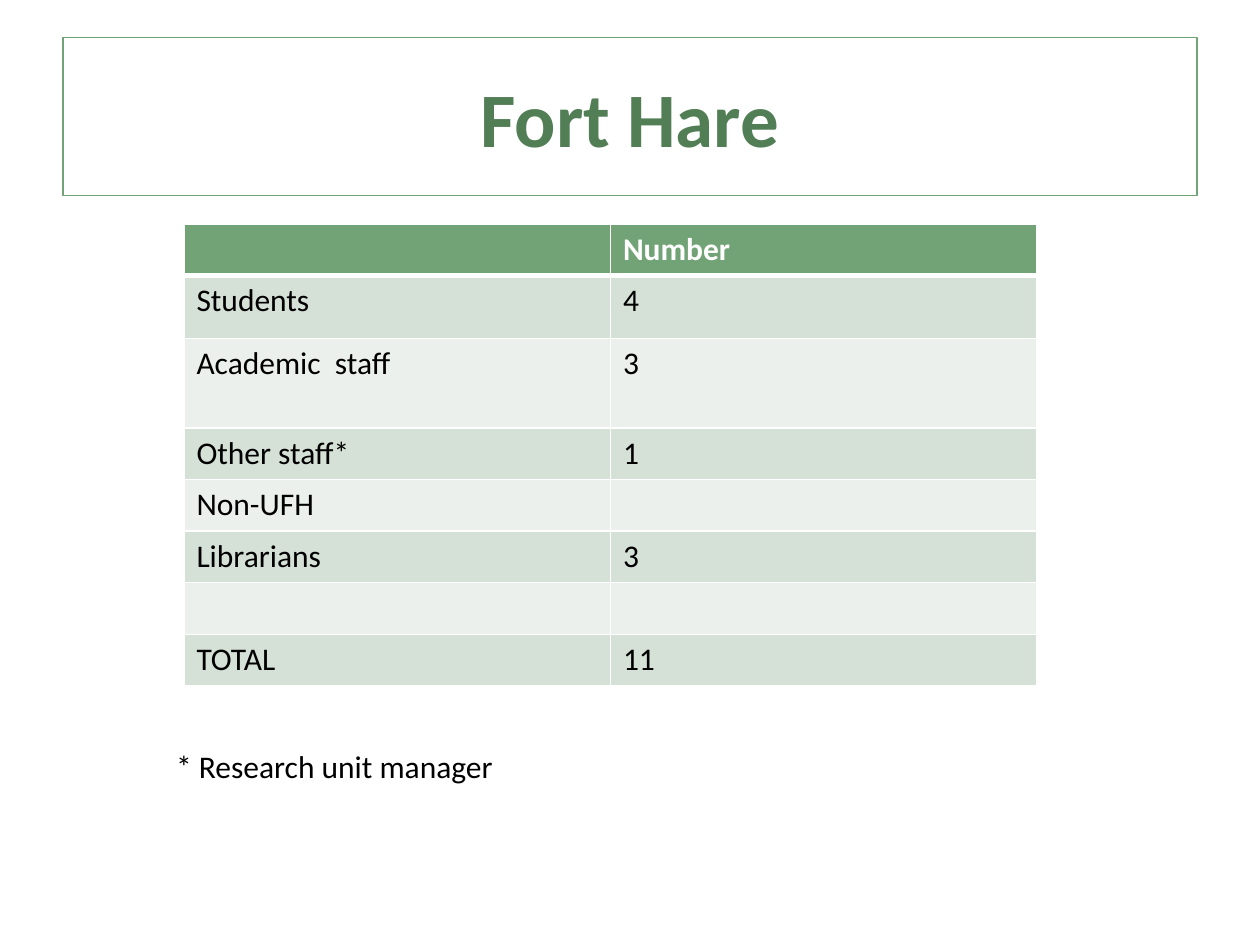
from pptx import Presentation
from pptx import util as u
from pptx.dml.color import RGBColor
from pptx.enum import text
from pptx.oxml.ns import qn
from lxml import etree

FONT = "Calibri"
GREEN, DARK_GREEN = "72A376", "527E56"
BANDS = ("D5E0D6", "EBF0EC")
WHITE, BLACK = "FFFFFF", "000000"
ROWS = [
    ("", "Number"),
    ("Students", "4"),
    ("Academic  staff", "3"),
    ("Other staff*", "1"),
    ("Non-UFH", ""),
    ("Librarians", "3"),
    ("", ""),
    ("TOTAL", "11"),
]
ROW_HEIGHTS = [0.4, 0.5, 0.71] + [0.41] * 5


def color(value):
    return RGBColor.from_string(value)


def add_run(para, wording, size, fill, bold=False):
    span = para.add_run()
    span.text = wording
    span.font.name = FONT
    span.font.size = u.Pt(size)
    span.font.bold = bold
    span.font.color.rgb = color(fill)


def place(shape, left, top, width, height):
    shape.left, shape.top = u.Inches(left), u.Inches(top)
    shape.width, shape.height = u.Inches(width), u.Inches(height)


def add_title(page, wording):
    title = page.shapes.title
    place(title, 0.5, 0.3, 9, 1.25)
    title.line.color.rgb = color(GREEN)
    title.line.width = u.Pt(0.75)
    title.text_frame.vertical_anchor = text.MSO_ANCHOR.MIDDLE
    para = title.text_frame.paragraphs[0]
    para.alignment = text.PP_ALIGN.CENTER
    add_run(para, wording, 44, DARK_GREEN, bold=True)


def set_borders(cell, top, bottom):
    properties = cell._tc.get_or_add_tcPr()
    for side, width in (("L", 1), ("R", 1), ("T", top), ("B", bottom)):
        line = etree.SubElement(properties, qn(f"a:ln{side}"), w=str(u.Pt(width)))
        fill = etree.SubElement(line, qn("a:solidFill"))
        etree.SubElement(fill, qn("a:srgbClr"), val=WHITE)


def add_staff_table(page):
    frame = page.shapes.add_table(
        len(ROWS), 2, u.Inches(1.46), u.Inches(1.78),
        u.Inches(6.77), u.Inches(sum(ROW_HEIGHTS)))
    table = frame.table
    for index, (wordings, height) in enumerate(zip(ROWS, ROW_HEIGHTS)):
        table.rows[index].height = u.Inches(height)
        header = index == 0
        for cell, wording in zip(table.rows[index].cells, wordings):
            # A thick rule separates the header from the body
            set_borders(cell, top=3 if index == 1 else 1, bottom=3 if header else 1)
            cell.fill.solid()
            cell.fill.fore_color.rgb = color(GREEN if header else BANDS[(index - 1) % 2])
            if wording:
                add_run(cell.text_frame.paragraphs[0], wording, 18,
                        WHITE if header else BLACK, bold=header)


def add_footnote(page, wording):
    box = page.shapes.add_textbox(
        u.Inches(1.3), u.Inches(5.88), u.Inches(5.67), u.Inches(0.4))
    box.text_frame.word_wrap = True
    add_run(box.text_frame.paragraphs[0], wording, 18, BLACK)


def main():
    deck = Presentation()
    deck.slide_width, deck.slide_height = u.Inches(10), u.Inches(7.5)
    page = deck.slides.add_slide(deck.slide_layouts[5])
    add_title(page, "Fort Hare")
    add_staff_table(page)
    add_footnote(page, "* Research unit manager")
    deck.save("out.pptx")


if __name__ == "__main__":
    main()
